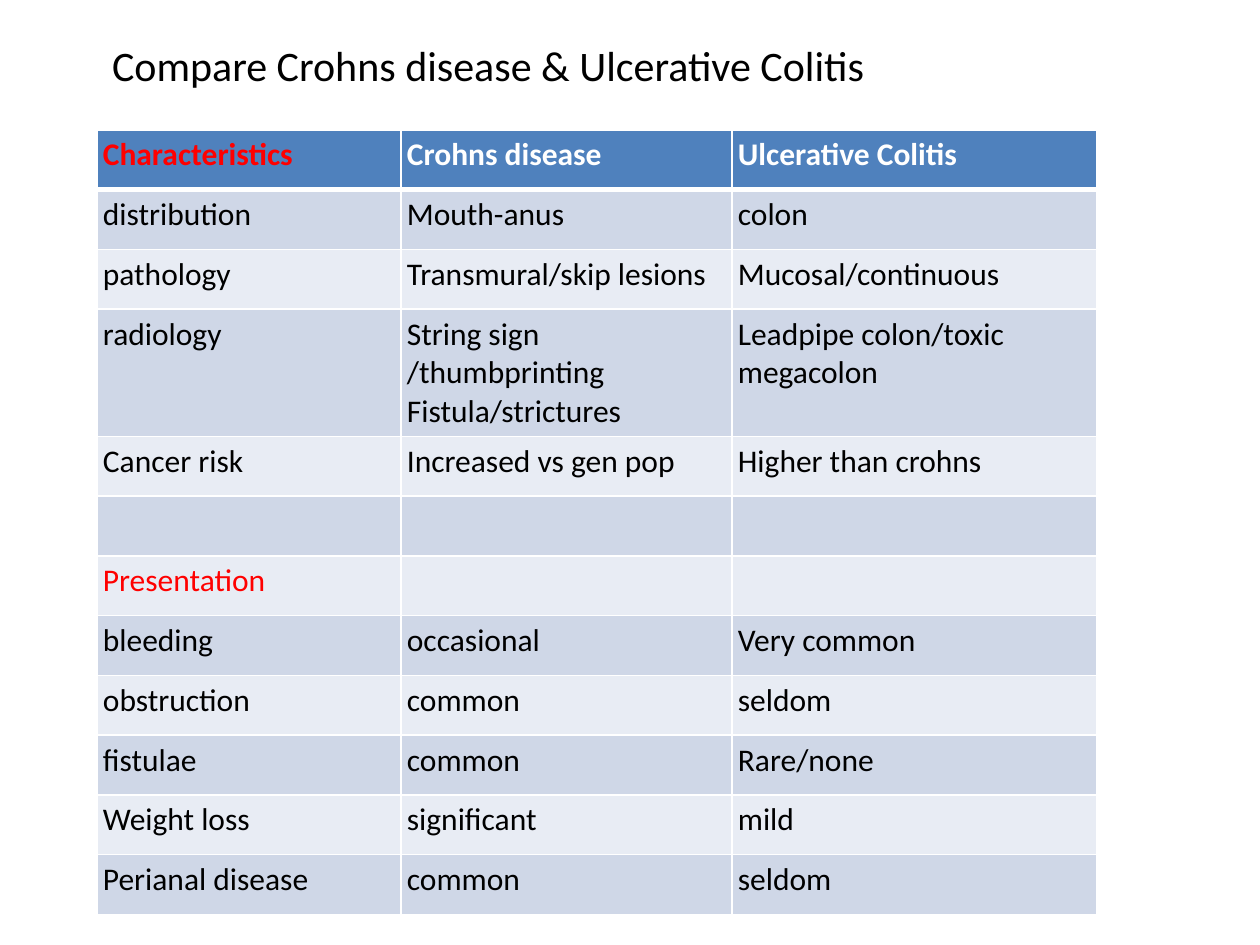
from lxml.etree import SubElement
from pptx import Presentation
from pptx.dml.color import RGBColor
from pptx.enum.text import MSO_ANCHOR as Anchor, MSO_AUTO_SIZE as AutoSize, PP_ALIGN as Align
from pptx.oxml.ns import qn
from pptx.util import Pt

EMU_PER_PX = 914400 / 126
FONT = "Calibri"
INSET = 6
BLACK = RGBColor(0x00, 0x00, 0x00)
WHITE = RGBColor(0xFF, 0xFF, 0xFF)
RED = RGBColor(0xFF, 0x00, 0x00)
HEADER_BLUE = RGBColor(0x4F, 0x81, 0xBD)
BANDS = (RGBColor(0xE8, 0xEC, 0xF4), RGBColor(0xCF, 0xD7, 0xE7))

TITLE = "Compare Crohns disease & Ulcerative Colitis"
COLUMN_WIDTHS = (304, 331, 365)
SECTION_LABELS = ("Characteristics", "Presentation")
ROWS = (
    ("Characteristics", "Crohns disease", "Ulcerative Colitis"),
    ("distribution", "Mouth-anus", "colon"),
    ("pathology", "Transmural/skip lesions", "Mucosal/continuous"),
    ("radiology", "String sign /thumbprinting\nFistula/strictures", "Leadpipe colon/toxic megacolon"),
    ("Cancer risk", "Increased vs gen pop", "Higher than crohns"),
    ("", "", ""),
    ("Presentation", "", ""),
    ("bleeding", "occasional", "Very common"),
    ("obstruction", "common", "seldom"),
    ("fistulae", "common", "Rare/none"),
    ("Weight loss", "significant", "mild"),
    ("Perianal disease", "common", "seldom"),
)


def px(value):
    return round(value * EMU_PER_PX)


def write_text(frame, text, size=18, color=BLACK, bold=False):
    frame.text = text
    frame.word_wrap = True
    for paragraph in frame.paragraphs:
        paragraph.alignment = Align.LEFT
        font = paragraph.font
        for run in paragraph.runs:
            font = run.font
            font.name = FONT
            font.color.rgb = color
            font.bold = bold
        font.size = Pt(size)


def set_insets(target):
    target.margin_left = target.margin_right = px(INSET)
    target.margin_top = target.margin_bottom = px(INSET)
    target.vertical_anchor = Anchor.TOP


def set_borders(cell, top=1, bottom=1):
    properties = cell._tc.get_or_add_tcPr()
    for side, width in (("L", 1), ("R", 1), ("T", top), ("B", bottom)):
        line = SubElement(properties, qn(f"a:ln{side}"), w=str(Pt(width)))
        fill = SubElement(line, qn("a:solidFill"))
        SubElement(fill, qn("a:srgbClr"), val=str(WHITE))


def place_title(slide, left, top, width, height):
    title = slide.shapes.title
    title.left, title.top = px(left), px(top)
    title.width, title.height = px(width), px(height)
    frame = title.text_frame
    frame.auto_size = AutoSize.NONE
    set_insets(frame)
    write_text(frame, TITLE, size=24)


def format_cell(cell, text, row_index):
    is_header = row_index == 0
    set_borders(cell, top=3 if row_index == 1 else 1, bottom=3 if is_header else 1)
    cell.fill.solid()
    cell.fill.fore_color.rgb = HEADER_BLUE if is_header else BANDS[row_index % 2]
    set_insets(cell)
    color = RED if text in SECTION_LABELS else WHITE if is_header else BLACK
    write_text(cell.text_frame, text, color=color, bold=is_header)


def place_comparison(slide, left, top, height):
    frame = slide.shapes.add_table(
        len(ROWS), len(COLUMN_WIDTHS), px(left), px(top), px(sum(COLUMN_WIDTHS)), px(height)
    )
    table = frame.table
    for column, width in zip(table.columns, COLUMN_WIDTHS):
        column.width = px(width)
    for row_index, (row, texts) in enumerate(zip(table.rows, ROWS)):
        row.height = px(height / len(ROWS))
        for cell, text in zip(row.cells, texts):
            format_cell(cell, text, row_index)


def main():
    presentation = Presentation()
    presentation.slide_width, presentation.slide_height = px(1260), px(945)
    slide = presentation.slides.add_slide(presentation.slide_layouts[5])
    place_title(slide, left=106, top=33, width=839, height=257)
    place_comparison(slide, left=97, top=130, height=717)
    presentation.save("out.pptx")


if __name__ == "__main__":
    main()
